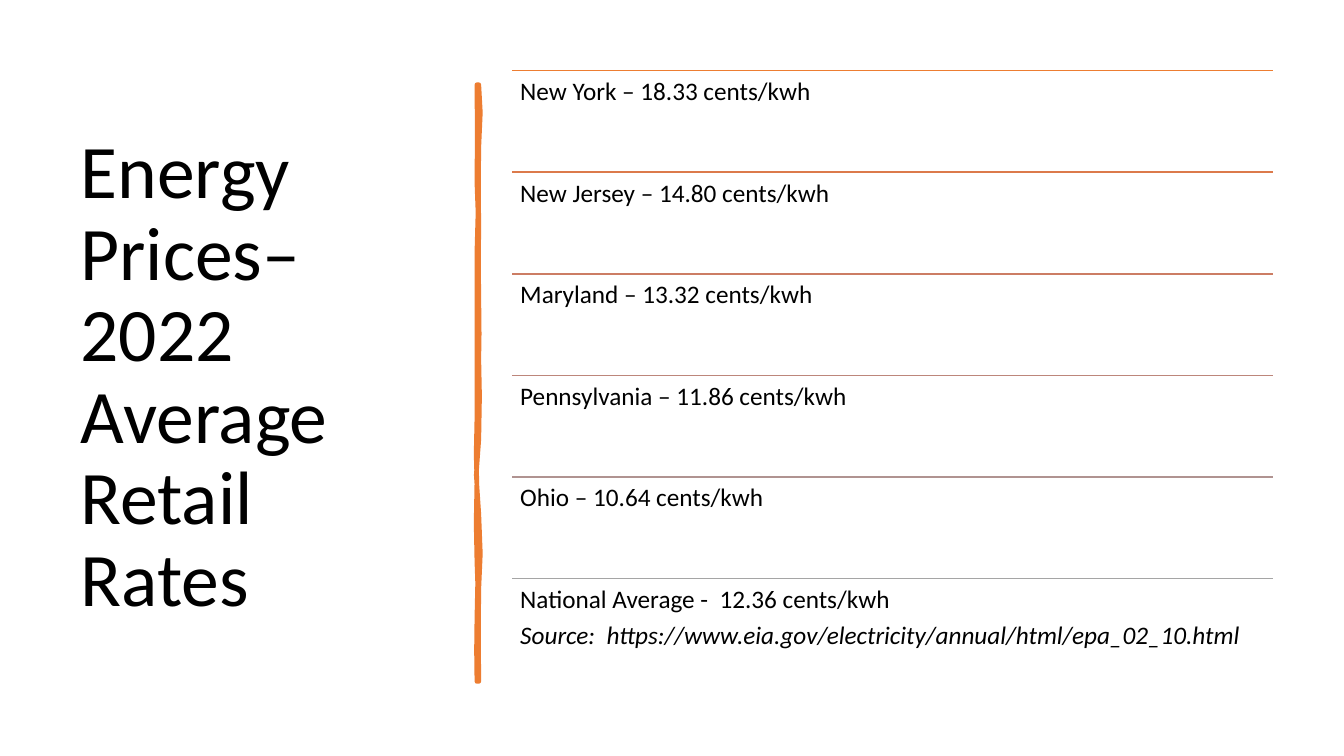
import pptx
import pptx.dml.color
import pptx.enum.shapes
import pptx.enum.text
import pptx.oxml.ns
import pptx.util
from lxml import etree

Inches = pptx.util.Inches
Pt = pptx.util.Pt
RGBColor = pptx.dml.color.RGBColor

BLACK = RGBColor(0x00, 0x00, 0x00)
ORANGE = RGBColor(0xED, 0x7D, 0x31)
FONT = "Calibri"

TITLE = "Energy Prices– 2022 Average Retail Rates"
RATES = [
    (ORANGE, ["New York – 18.33 cents/kwh"]),
    (RGBColor(0xDC, 0x7A, 0x4B), ["New Jersey – 14.80 cents/kwh"]),
    (RGBColor(0xCC, 0x7D, 0x64), ["Maryland – 13.32 cents/kwh"]),
    (RGBColor(0xBD, 0x86, 0x7B), ["Pennsylvania – 11.86 cents/kwh"]),
    (RGBColor(0xB0, 0x93, 0x91), ["Ohio – 10.64 cents/kwh"]),
    (RGBColor(0xA5, 0xA5, 0xA5), [
        "National Average -  12.36 cents/kwh",
        "Source:  https://www.eia.gov/electricity/annual/html/epa_02_10.html",
    ]),
]
LIST_LEFT, LIST_TOP, LIST_WIDTH, LIST_HEIGHT = 5.08, 0.7, 7.55, 6.05
ROW_HEIGHT = LIST_HEIGHT / len(RATES)

BRUSH_START = (4.75, 0.84)
BRUSH_CURVES = [
    ((4.77, 1.02), (4.77, 1.19), (4.75, 1.46)),
    ((4.73, 1.73), (4.76, 1.95), (4.75, 2.26)),
    ((4.74, 2.57), (4.75, 2.62), (4.75, 2.94)),
    ((4.74, 3.25), (4.77, 3.42), (4.75, 3.56)),
    ((4.73, 3.7), (4.79, 4.14), (4.75, 4.36)),
    ((4.71, 4.57), (4.72, 4.84), (4.75, 5.1)),
    ((4.77, 5.36), (4.77, 5.64), (4.75, 5.84)),
    ((4.73, 6.03), (4.76, 6.5), (4.75, 6.76)),
    ((4.74, 6.76), (4.73, 6.76), (4.73, 6.76)),
    ((4.74, 6.46), (4.71, 6.44), (4.73, 6.13)),
    ((4.74, 5.83), (4.74, 5.7), (4.73, 5.57)),
    ((4.72, 5.44), (4.72, 4.95), (4.73, 4.77)),
    ((4.73, 4.59), (4.71, 4.45), (4.73, 4.15)),
    ((4.74, 3.86), (4.72, 3.73), (4.73, 3.35)),
    ((4.74, 2.98), (4.72, 2.81), (4.73, 2.5)),
    ((4.74, 2.18), (4.75, 2), (4.73, 1.81)),
    ((4.7, 1.63), (4.77, 1.04), (4.73, 0.84)),
]
CURVE_STEPS = 2


def curve_points(start, curves):
    points = []
    for first, second, end in curves:
        for step in range(1, CURVE_STEPS + 1):
            t = step / CURVE_STEPS
            weights = ((1 - t) ** 3, 3 * t * (1 - t) ** 2, 3 * t ** 2 * (1 - t), t ** 3)
            points.append(tuple(
                Inches(sum(weight * value for weight, value in zip(weights, values)))
                for values in zip(start, first, second, end)
            ))
        start = end
    return points


def format_paragraph(paragraph, size):
    paragraph.font.name = FONT
    paragraph.font.size = Pt(size)
    paragraph.font.color.rgb = BLACK
    paragraph.line_spacing = 0.9
    paragraph.alignment = pptx.enum.text.PP_ALIGN.LEFT


def add_title(slide):
    title = slide.shapes.title
    title.left, title.top = Inches(0.7), Inches(0.7)
    title.width, title.height = Inches(3.74), Inches(6.1)
    frame = title.text_frame
    frame.text = TITLE
    frame.word_wrap = True
    frame.auto_size = pptx.enum.text.MSO_AUTO_SIZE.NONE
    frame.vertical_anchor = pptx.enum.text.MSO_ANCHOR.MIDDLE
    frame.margin_right = Inches(0.25)
    format_paragraph(frame.paragraphs[0], 54)


def add_brush_stroke(slide):
    builder = slide.shapes.build_freeform(*map(Inches, BRUSH_START))
    builder.add_line_segments(curve_points(BRUSH_START, BRUSH_CURVES), close=True)
    stroke = builder.convert_to_shape()
    stroke.shadow.inherit = False
    stroke.fill.solid()
    stroke.fill.fore_color.rgb = ORANGE
    stroke.line.color.rgb = ORANGE
    stroke.line.width = Pt(3.25)
    outline = stroke._element.spPr.find(pptx.oxml.ns.qn("a:ln"))
    etree.SubElement(outline, pptx.oxml.ns.qn("a:round"))


def add_rate(shapes, top, color, lines):
    rule = shapes.add_connector(
        pptx.enum.shapes.MSO_CONNECTOR.STRAIGHT,
        Inches(LIST_LEFT), Inches(top), Inches(LIST_LEFT + LIST_WIDTH), Inches(top),
    )
    rule.line.color.rgb = color
    rule.line.width = Pt(1)
    etree.SubElement(rule._element.spPr, pptx.oxml.ns.qn("a:effectLst"))

    box = shapes.add_textbox(
        Inches(LIST_LEFT), Inches(top), Inches(LIST_WIDTH), Inches(ROW_HEIGHT)
    )
    frame = box.text_frame
    frame.word_wrap = True
    frame.margin_left = frame.margin_right = Inches(0.08)
    frame.margin_top = frame.margin_bottom = Inches(0.08)
    frame.text = "\n".join(lines)
    for index, paragraph in enumerate(frame.paragraphs):
        format_paragraph(paragraph, 18)
        paragraph.space_after = Pt(6)
        if index > 0:
            paragraph.font.italic = True


def main():
    presentation = pptx.Presentation()
    presentation.slide_width = Inches(13.33)
    presentation.slide_height = Inches(7.5)
    slide = presentation.slides.add_slide(presentation.slide_layouts.get_by_name("Title Only"))
    add_title(slide)
    add_brush_stroke(slide)
    rate_list = slide.shapes.add_group_shape()
    for row, (color, lines) in enumerate(RATES):
        add_rate(rate_list.shapes, LIST_TOP + row * ROW_HEIGHT, color, lines)
    presentation.save("out.pptx")


if __name__ == "__main__":
    main()
